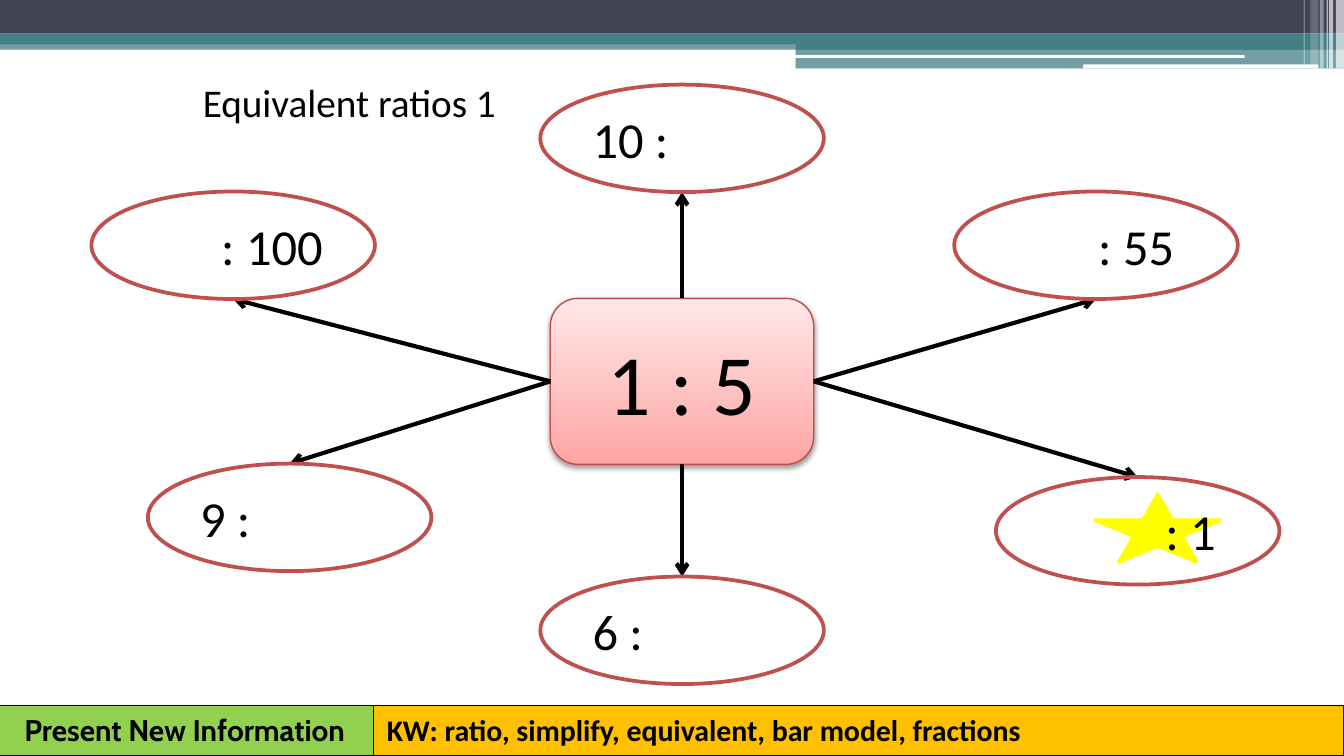
"""Builds the equivalent ratios slide: a central ratio with arrows to six ovals."""
from lxml.etree import SubElement
from pptx import Presentation
from pptx.dml.color import RGBColor
from pptx.enum.shapes import MSO_CONNECTOR, MSO_SHAPE
from pptx.enum.text import MSO_ANCHOR, PP_ALIGN
from pptx.oxml import parse_xml
from pptx.oxml.ns import nsdecls, qn
from pptx.util import Inches, Pt

color = RGBColor.from_string
deck = Presentation()
deck.slide_width = Inches(10)
deck.slide_height = deck.slide_width * 9 // 16
column, row = deck.slide_width / 100, deck.slide_height / 56.25
page = deck.slides.add_slide(deck.slide_layouts[5])


def add_box(kind, place, fill=None, line=None, width=0.75, opacity=100):
    """Add a preset shape at (left, top, width, height) in grid units."""
    lengths = [int(value * unit) for value, unit in zip(place, (column, row) * 2)]
    box = page.shapes.add_shape(kind, *lengths)
    box.shadow.inherit = False
    if fill:
        box.fill.solid()
        box.fill.fore_color.rgb = color(fill)
    else:
        box.fill.background()
    if line:
        box.line.color.rgb = color(line)
        box.line.width = Pt(width)
    else:
        box.line.fill.background()
    if opacity < 100:
        tint = box.fill._xPr.find(".//" + qn("a:srgbClr"))
        SubElement(tint, qn("a:alpha"), val=str(opacity * 1000))
    return box


def write(box, text, size, align, font="Calibri", bold=False, anchor=MSO_ANCHOR.MIDDLE, inset=0.08):
    """Put one formatted line of text into a shape."""
    frame = box.text_frame
    frame.text = text
    layout = {"word_wrap": True, "vertical_anchor": anchor, "margin_left": Inches(inset),
              "margin_right": Inches(inset), "margin_top": Inches(inset / 2),
              "margin_bottom": Inches(inset / 2)}
    for name, value in layout.items():
        setattr(frame, name, value)
    para = frame.paragraphs[0]
    para.alignment = align
    span = para.runs[0]
    for name, value in {"size": Pt(size), "name": font, "bold": bold}.items():
        setattr(span.font, name, value)
    span.font.color.rgb = color("000000")


haze = [((0, 3, 100, 0.7), "438086", 50), ((59.2, 3.6, 40.8, 1.5), "438086", 50)]
stripes = [((left, 0, width, height), "FFFFFF", opacity) for left, width, height, opacity in (
    (99.4, 0.6, 5.1, 65), (98.9, 0.3, 5.1, 65), (98.7, 0.1, 5.1, 60),
    (98.2, 0.3, 5.1, 40), (97.5, 0.6, 4.8, 20), (97, 0.1, 4.8, 30))]
bars = [((0, 0, 100, 2.5), "424456", 100), ((0, 2.5, 100, 0.8), "438086", 100),
        ((59.2, 3, 40.8, 0.7), "438086", 100)]
gaps = [((59.1, 4.1, 33.5, 0.2), "FFFFFF", 100), ((80.6, 4.8, 17.5, 0.3), "FFFFFF", 100)]
for kind, bands in ((MSO_SHAPE.RECTANGLE, haze + stripes + haze[:1] + bars + haze[1:]),
                    (MSO_SHAPE.ROUNDED_RECTANGLE, gaps), (MSO_SHAPE.RECTANGLE, stripes)):
    for place, fill, opacity in bands:
        add_box(kind, place, fill, opacity=opacity)

title = page.shapes.title
for name, value in {"left": -19 * column, "top": 2.9 * row, "width": 90 * column, "height": 9.4 * row}.items():
    setattr(title, name, int(value))
write(title, "Equivalent ratios 1", 21, PP_ALIGN.CENTER)

center = add_box(MSO_SHAPE.ROUNDED_RECTANGLE, (40.95, 22.2, 19.6, 12.35), "FFA6A5", "BF4C48")
center.fill.gradient()
center.fill.gradient_angle = 90
for stop, shade in zip(center.fill.gradient_stops, ("FFA6A5", "FFE7E7")):
    stop.color.rgb = color(shade)
effects = center._element.spPr.find(qn("a:effectLst"))
effects.append(parse_xml(
    f'<a:outerShdw {nsdecls("a")} blurRad="{Pt(3.1)}" dist="{Pt(1.6)}" dir="5400000" rotWithShape="0">'
    '<a:srgbClr val="000000"><a:alpha val="38000"/></a:srgbClr></a:outerShdw>'))
write(center, "1 : 5", 46, PP_ALIGN.CENTER)

add_box(MSO_SHAPE.STAR_5_POINT, (81.5, 36.8, 9.3, 5), "FFFF00", "FFFF00", 2)

oval_width, oval_height = 21.1, 8
ovals = [("10 :", 40.2, 6.3, PP_ALIGN.LEFT, 0), (": 100", 6.8, 14.25, PP_ALIGN.RIGHT, 1),
         ("6 :", 40.2, 42.9, PP_ALIGN.LEFT, 2), (": 55 ", 71, 14.25, PP_ALIGN.RIGHT, 3),
         ("9 :", 11, 34.5, PP_ALIGN.LEFT, 1), (": 1 ", 74.1, 35.5, PP_ALIGN.RIGHT, 3)]
for text, left, top, align, side in ovals:
    target = top if top > 30 else top + oval_height
    arrow = page.shapes.add_connector(
        MSO_CONNECTOR.STRAIGHT, 0, 0, int((left + oval_width / 2) * column), int(target * row))
    arrow.begin_connect(center, side)
    arrow.line.color.rgb = color("000000")
    arrow.line.width = Pt(2.25)
    SubElement(arrow.line._get_or_add_ln(), qn("a:tailEnd"), type="arrow")
    SubElement(arrow._element.spPr, qn("a:effectLst"))
    fill = None if text == ": 1 " else "FFFFFF"
    oval = add_box(MSO_SHAPE.OVAL, (left, top, oval_width, oval_height), fill, "C0504D", 2)
    write(oval, text, 27, align)

footer = [("Present New Information", -0.3, 28.1, "92D050", PP_ALIGN.CENTER, "Cabin"),
          ("KW: ratio, simplify, equivalent, bar model, fractions", 27.8, 72.2, "FFC000",
           PP_ALIGN.LEFT, "Calibri")]
for text, left, width, fill, align, font in footer:
    label = add_box(MSO_SHAPE.RECTANGLE, (left, 52.5, width, 3.7), fill, "000000")
    write(label, text, 16, align, font, True, MSO_ANCHOR.TOP, 0.1)

deck.save("out.pptx")
